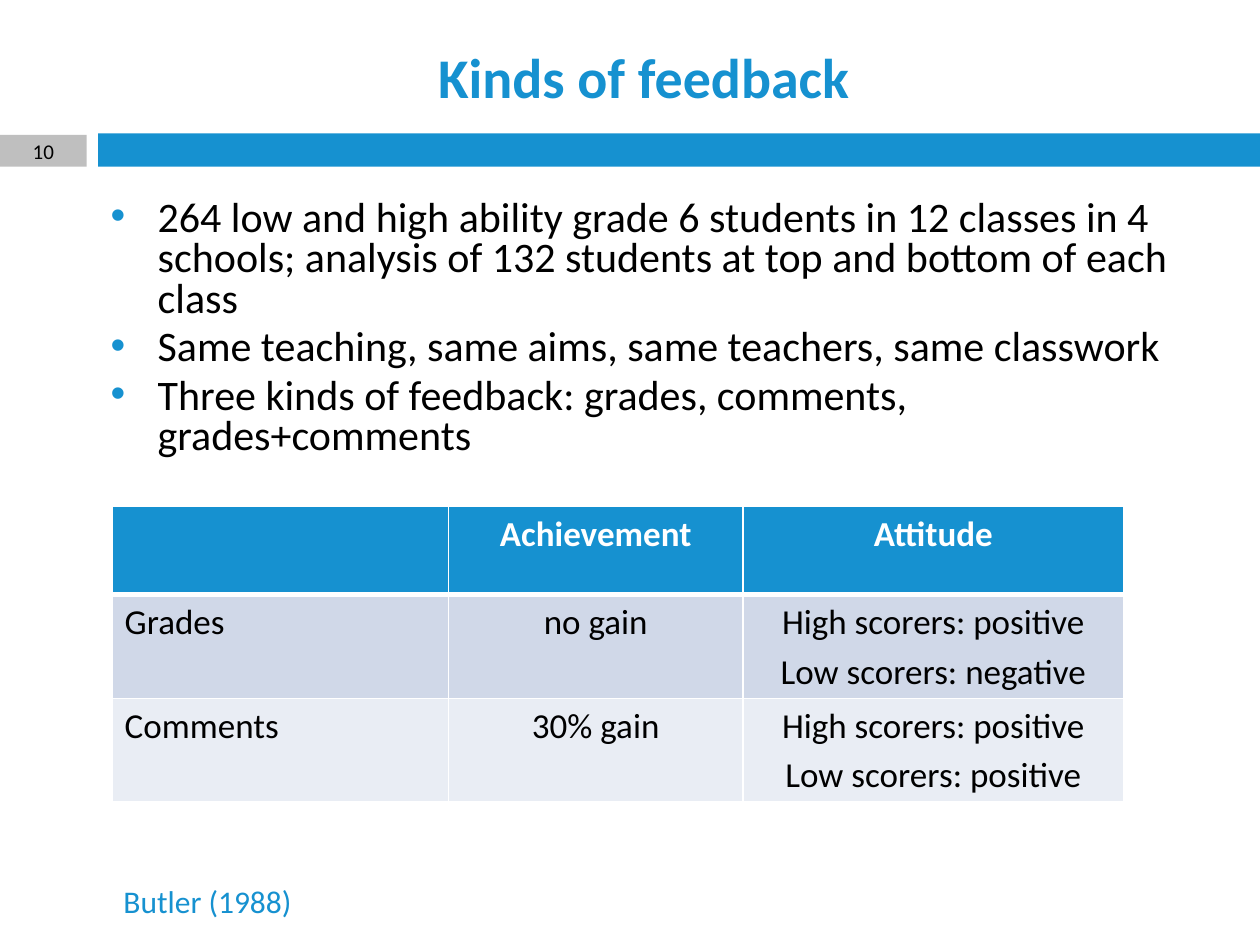
"""Build a slide on kinds of feedback with bullets and a table of results."""
from lxml.etree import SubElement
from pptx import Presentation
from pptx.dml.color import RGBColor
from pptx.enum.shapes import MSO_SHAPE
from pptx.enum.text import MSO_ANCHOR, PP_ALIGN
from pptx.oxml import parse_xml
from pptx.oxml.ns import nsdecls, qn
from pptx.util import Cm, Pt

BLUE = RGBColor(0x16, 0x91, 0xD0)
GREY = RGBColor(0xBF, 0xBF, 0xBF)
BLACK = RGBColor(0, 0, 0)
WHITE = RGBColor(0xFF, 0xFF, 0xFF)
BANDS = [BLUE, RGBColor(0xD0, 0xD8, 0xE8), RGBColor(0xE9, 0xED, 0xF4)]

POINTS = [
    "264 low and high ability grade 6 students in 12 classes in 4 schools; "
    "analysis of 132 students at top and bottom of each class",
    "Same teaching, same aims, same teachers, same classwork",
    "Three kinds of feedback: grades, comments, grades+comments",
]
ROWS = [
    ["", "Achievement", "Attitude"],
    ["Grades", "no gain", "High scorers: positive\nLow scorers: negative"],
    ["Comments", "30% gain", "High scorers: positive\nLow scorers: positive"],
]
WIDTHS = [6.78, 5.94, 7.67]
HEIGHTS = [1.78, 2.08, 2.08]


def write(frame, text, size=20, color=BLACK, bold=False,
          align=PP_ALIGN.LEFT, lead=None, bullet=False):
    for i, line in enumerate(text.split("\n")):
        para = frame.paragraphs[0] if i == 0 else frame.add_paragraph()
        if bullet:
            mark(para)
        para.alignment = align
        para.line_spacing = lead
        if i:
            para.space_before = Pt(size * 0.2)
        run = para.add_run()
        run.text = line
        run.font.name = "Calibri"
        run.font.size = Pt(size)
        run.font.bold = bold
        run.font.color.rgb = color


def mark(para):
    props = para._p.get_or_add_pPr()
    props.set("marL", str(Cm(0.95)))
    props.set("indent", str(-Cm(0.95)))
    tint = SubElement(props, qn("a:buClr"))
    SubElement(tint, qn("a:srgbClr"), val=str(BLUE))
    SubElement(props, qn("a:buFont"), typeface="Arial")
    SubElement(props, qn("a:buChar"), char="•")


def add_text(slide, place, text, anchor=MSO_ANCHOR.TOP, wrap=True, **style):
    frame = slide.shapes.add_textbox(*map(Cm, place)).text_frame
    frame.word_wrap = wrap
    frame.vertical_anchor = anchor
    write(frame, text, **style)


def add_bar(slide, place, color):
    bar = slide.shapes.add_shape(MSO_SHAPE.RECTANGLE, *map(Cm, place))
    bar.shadow.inherit = False
    bar.fill.solid()
    bar.fill.fore_color.rgb = color
    bar.line.fill.background()
    return bar


def edge(cell, top, base):
    props = cell._tc.get_or_add_tcPr()
    sides = {"lnL": 1, "lnR": 1, "lnT": top, "lnB": base}
    for i, (side, width) in enumerate(sides.items()):
        props.insert(i, parse_xml(
            f'<a:{side} {nsdecls("a")} w="{Pt(width)}"><a:solidFill>'
            f'<a:srgbClr val="{WHITE}"/></a:solidFill></a:{side}>'))


def add_grid(slide, left, top):
    grid = slide.shapes.add_table(
        len(ROWS), len(WIDTHS), Cm(left), Cm(top),
        Cm(sum(WIDTHS)), Cm(sum(HEIGHTS))).table
    for col, width in zip(grid.columns, WIDTHS):
        col.width = Cm(width)
    for r, texts in enumerate(ROWS):
        grid.rows[r].height = Cm(HEIGHTS[r])
        head = r == 0
        for c, text in enumerate(texts):
            cell = grid.cell(r, c)
            cell.fill.solid()
            cell.fill.fore_color.rgb = BANDS[r]
            edge(cell, 3 if r == 1 else 1, 3 if head else 1)
            if text:
                write(cell.text_frame, text, bold=head,
                      color=WHITE if head else BLACK,
                      align=PP_ALIGN.CENTER if c else PP_ALIGN.LEFT)


def main():
    deck = Presentation()
    deck.slide_width, deck.slide_height = Cm(25.4), Cm(19.05)
    slide = deck.slides.add_slide(deck.slide_layouts[6])
    add_bar(slide, (1.98, 2.69, 23.42, 0.67), BLUE)
    tab = add_bar(slide, (0, 2.72, 1.75, 0.64), GREY)
    tab.text_frame.vertical_anchor = MSO_ANCHOR.MIDDLE
    write(tab.text_frame, "10", size=12, align=PP_ALIGN.CENTER)
    add_text(slide, (1.98, 0.66, 22, 1.73), "Kinds of feedback",
             anchor=MSO_ANCHOR.MIDDLE, size=32, color=BLUE, bold=True,
             align=PP_ALIGN.CENTER)
    add_text(slide, (1.98, 3.91, 22.56, 5.72), "\n".join(POINTS),
             size=24, lead=0.8, bullet=True)
    add_grid(slide, 2.26, 10.21)
    add_text(slide, (2.24, 17.65, 3.94, 1.02), "Butler (1988)",
             wrap=False, size=18, color=BLUE)
    deck.save("out.pptx")


if __name__ == "__main__":
    main()
